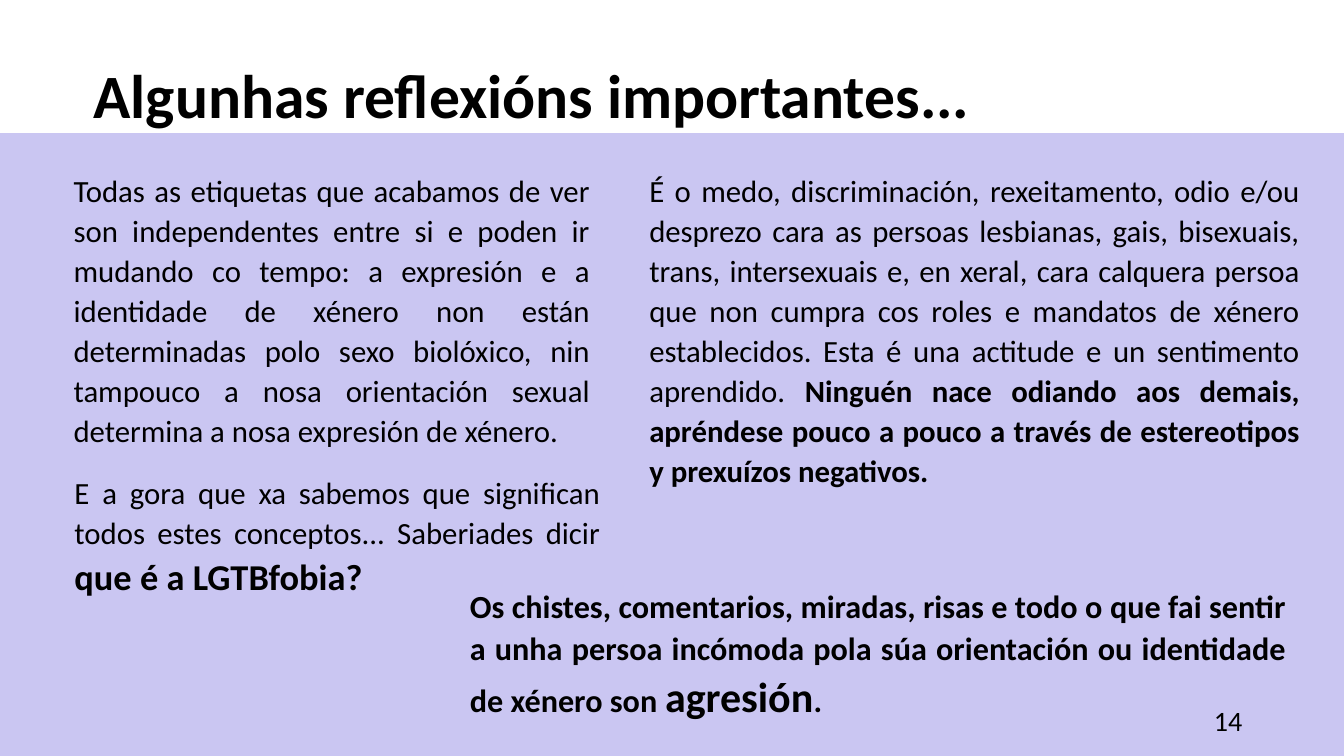
from pptx import Presentation
from pptx.dml.color import RGBColor
from pptx.enum.shapes import MSO_SHAPE
from pptx.enum.text import MSO_ANCHOR, PP_ALIGN
from pptx.oxml.ns import qn
from pptx.util import Inches, Pt

FONT = "Calibri"
BLACK = "000000"
LILAC = "CAC6F2"
NO_STYLE_NO_GRID = "{2D5ABB26-0587-4C30-8999-92F81FD0307C}"


def color(value):
    return RGBColor.from_string(value)


def write(tf, runs, align=PP_ALIGN.LEFT, line=1.07, after=8):
    """Fill the first paragraph with (text, size, bold) runs."""
    tf.word_wrap = True
    p = tf.paragraphs[0]
    p.alignment = align
    p.line_spacing = line
    p.space_after = Pt(after)
    p.font.name = FONT
    p.font.color.rgb = color(BLACK)
    for text, size, bold in runs:
        r = p.add_run()
        r.text = text
        r.font.size = Pt(size)
        r.font.bold = bold
        r.font.name = FONT
        r.font.color.rgb = color(BLACK)
    return p


def add_band(s, x, y, w, h):
    sp = s.shapes.add_shape(MSO_SHAPE.RECTANGLE, Inches(x), Inches(y), Inches(w), Inches(h))
    sp.shadow.inherit = False
    sp.fill.solid()
    sp.fill.fore_color.rgb = color(LILAC)
    sp.line.fill.background()


def add_text(s, x, y, w, h, runs, anchor=MSO_ANCHOR.TOP, **layout):
    tf = s.shapes.add_textbox(Inches(x), Inches(y), Inches(w), Inches(h)).text_frame
    tf.vertical_anchor = anchor
    write(tf, runs, **layout)


def add_text_table(s, x, y, w, h, runs, right_indent):
    """Place justified text in a one-cell table without fill or borders."""
    table = s.shapes.add_table(1, 1, Inches(x), Inches(y), Inches(w), Inches(h)).table
    table.first_row = table.horz_banding = False
    table._tbl.tblPr.find(qn("a:tableStyleId")).text = NO_STYLE_NO_GRID
    cell = table.cell(0, 0)
    cell.fill.background()
    cell.margin_left = cell.margin_right = Inches(0.07)
    cell.margin_top = cell.margin_bottom = 0
    p = write(cell.text_frame, runs, align=PP_ALIGN.JUSTIFY)
    pPr = p._p.get_or_add_pPr()
    pPr.set("marL", str(Inches(0.02)))
    pPr.set("marR", str(Inches(right_indent)))


def main():
    prs = Presentation()
    prs.slide_width, prs.slide_height = Inches(13.33), Inches(7.5)
    s = prs.slides.add_slide(prs.slide_layouts[6])

    add_band(s, 0, 1.32, 13.33, 6.18)
    add_text(s, 0.83, 0.46, 11.61, 0.86, [("Algunhas reflexións importantes...", 44, True)])
    add_text_table(s, 0.64, 1.69, 5.41, 2.73, [
        ("Todas as etiquetas que acabamos de ver son independentes entre si e poden ir "
         "mudando co tempo: a expresión e a identidade de xénero non están determinadas "
         "polo sexo biolóxico, nin tampouco a nosa orientación sexual determina a nosa "
         "expresión de xénero.", 22, False),
    ], right_indent=0.13)
    add_text(s, 0.64, 4.63, 5.41, 1.34, [
        ("E a gora que xa sabemos que significan todos estes conceptos... Saberiades dicir ",
         22, False),
        ("que é a LGTBfobia?", 26, True),
    ], align=PP_ALIGN.JUSTIFY)
    add_text_table(s, 6.35, 1.69, 6.69, 3.12, [
        ("É o medo, discriminación, rexeitamento, odio e/ou desprezo cara as persoas "
         "lesbianas, gais, bisexuais, trans, intersexuais e, en xeral, cara calquera persoa "
         "que non cumpra cos roles e mandatos de xénero establecidos. Esta é una actitude "
         "e un sentimento aprendido. ", 22, False),
        ("Ninguén nace odiando aos demais, apréndese pouco a pouco a través de "
         "estereotipos y prexuízos negativos.", 22, True),
    ], right_indent=0.08)
    add_text_table(s, 4.57, 5.8, 8.36, 1.33, [
        ("Os chistes, comentarios, miradas, risas e todo o que fai sentir a unha persoa "
         "incómoda pola súa orientación ou identidade de xénero son ", 23, True),
        ("agresión", 30, True),
        (".", 23, True),
    ], right_indent=0.09)
    add_text(s, 9.42, 6.95, 3, 0.4, [("14", 20, False)], anchor=MSO_ANCHOR.MIDDLE,
             align=PP_ALIGN.RIGHT, line=1.0, after=0)

    prs.save("out.pptx")


if __name__ == "__main__":
    main()
